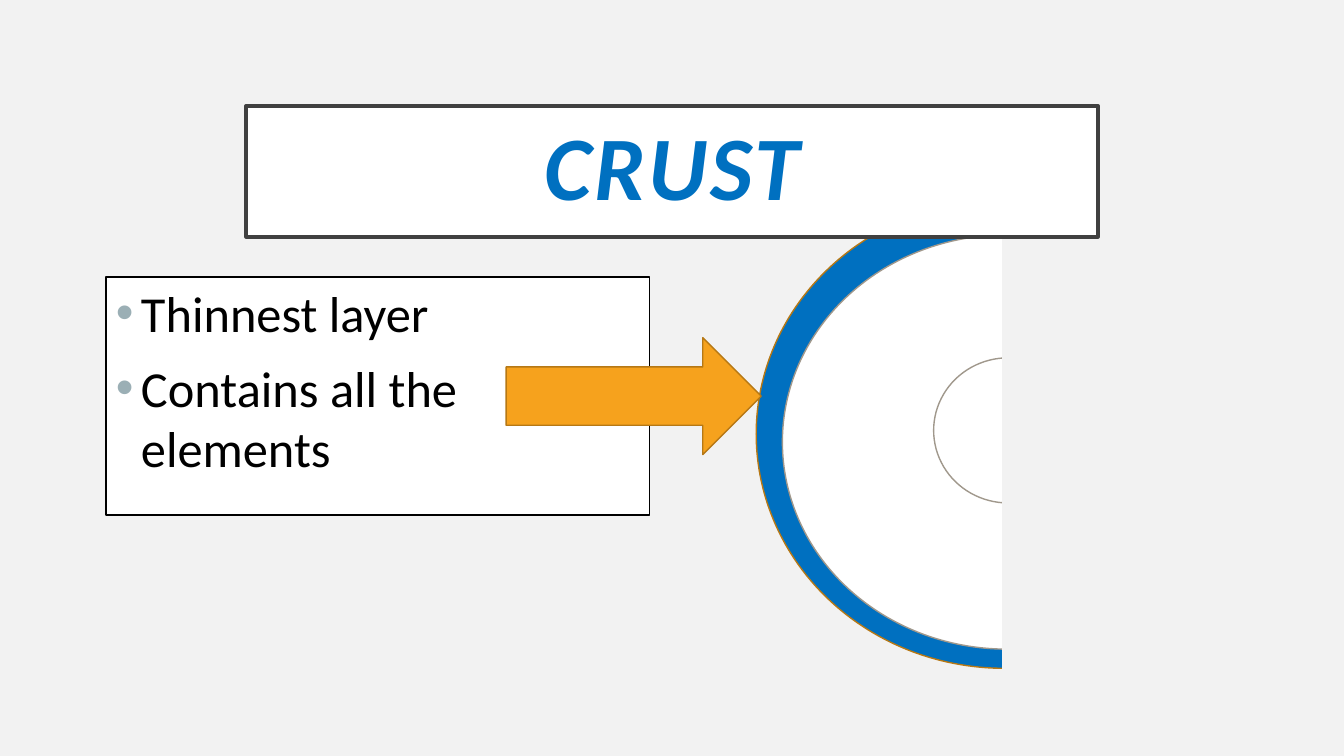
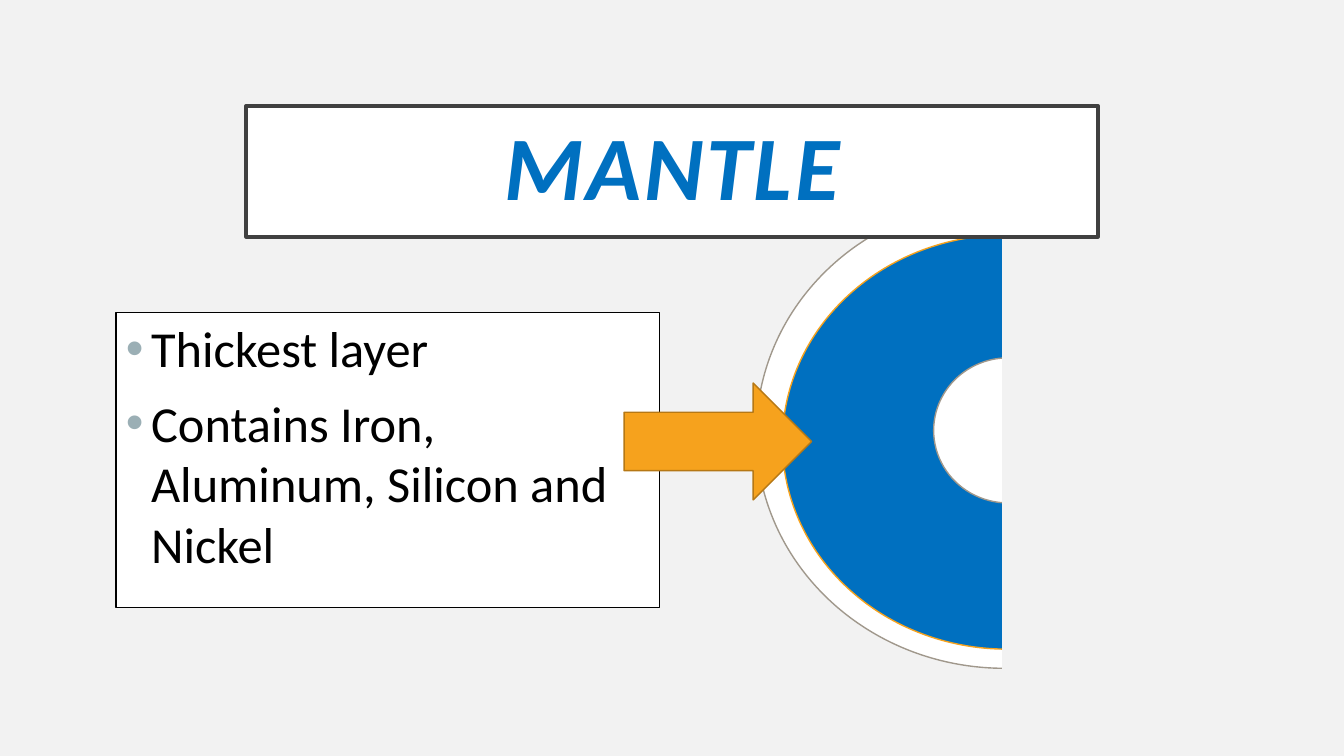
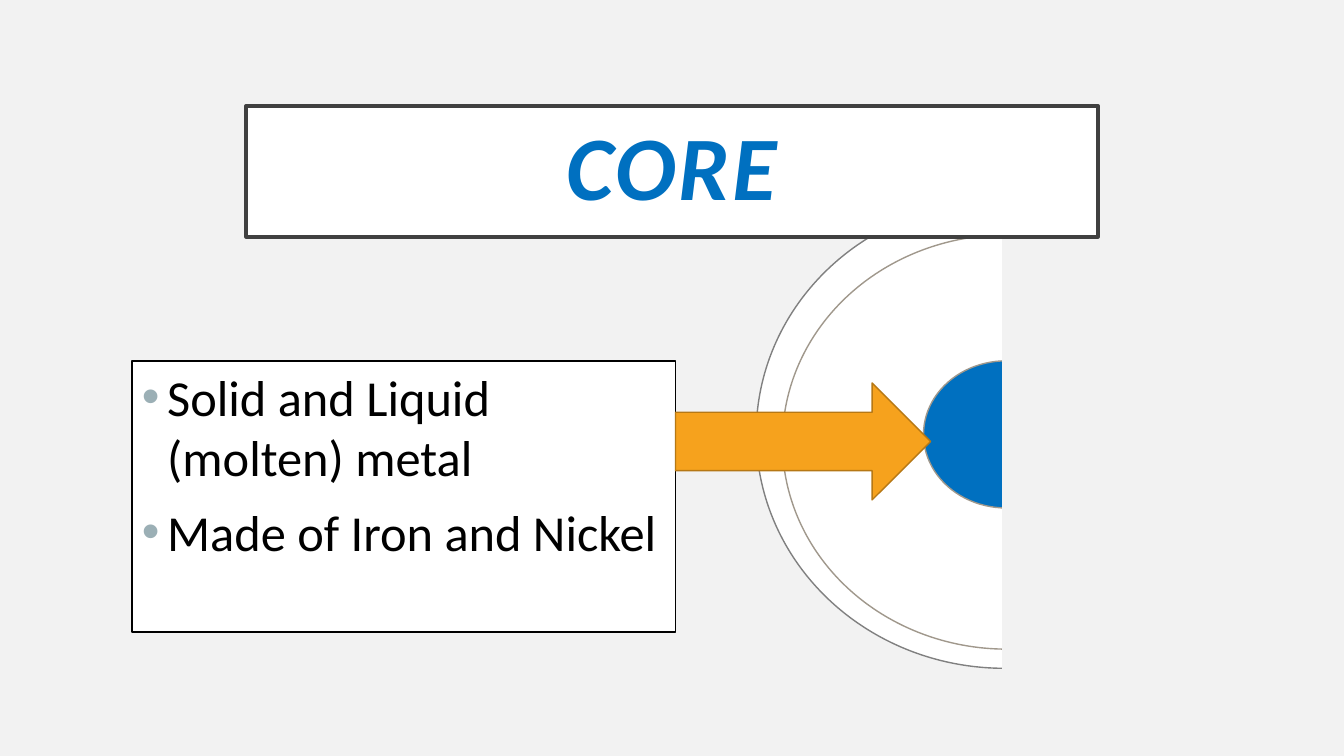
from lxml import etree
from pptx import Presentation
from pptx.dml.color import RGBColor
from pptx.enum.shapes import MSO_SHAPE
from pptx.enum.text import MSO_ANCHOR, PP_ALIGN
from pptx.oxml.ns import qn
from pptx.util import Emu, Pt

PX = 9144
RECTANGLE, OVAL, RIGHT_ARROW = MSO_SHAPE.RECTANGLE, MSO_SHAPE.OVAL, MSO_SHAPE.RIGHT_ARROW
TOP, MIDDLE = MSO_ANCHOR.TOP, MSO_ANCHOR.MIDDLE
LEFT, CENTER = PP_ALIGN.LEFT, PP_ALIGN.CENTER

BACKGROUND = RGBColor(0xF2, 0xF2, 0xF2)
WHITE = RGBColor(0xFF, 0xFF, 0xFF)
BLACK = RGBColor(0x00, 0x00, 0x00)
FRAME = RGBColor(0x40, 0x40, 0x40)
BLUE = RGBColor(0x00, 0x70, 0xC0)
ORANGE = RGBColor(0xF6, 0xA2, 0x1D)
BROWN = RGBColor(0xB6, 0x78, 0x15)
TAUPE = RGBColor(0xA0, 0x98, 0x8C)
GRAY = RGBColor(0x80, 0x80, 0x80)
BULLET = RGBColor(0x9B, 0xAF, 0xB5)
FONT = "Calibri"

TITLE_AREA = (244, 105, 845, 130)
COVER_AREA = (994, 184, 284, 519)
CRUST_AREA = (750, 198, 492, 465)
MANTLE_AREA = (776, 233, 445, 411)
CORE_AREA = (926, 355, 148, 144)
WIDE_CORE_AREA = (916, 358, 164, 146)

SLIDES = [
    {
        "title": "CRUST",
        "facts": ["Thinnest layer", "Contains all the elements"],
        "facts_area": (105, 275, 539, 236),
        "layers": [(CRUST_AREA, BLUE, BROWN), (MANTLE_AREA, WHITE, TAUPE), (CORE_AREA, WHITE, TAUPE)],
        "arrow_area": (502, 335, 253, 116),
    },
    {
        "title": "MANTLE",
        "facts": ["Thickest layer", "Contains Iron, Aluminum, Silicon and Nickel"],
        "facts_area": (115, 310, 539, 293),
        "layers": [(CRUST_AREA, WHITE, TAUPE), (MANTLE_AREA, BLUE, ORANGE), (CORE_AREA, WHITE, TAUPE)],
        "arrow_area": (619, 380, 186, 116),
    },
    {
        "title": "CORE",
        "facts": ["Solid and Liquid (molten) metal", "Made of Iron and Nickel"],
        "facts_area": (131, 358, 539, 269),
        "layers": [(CRUST_AREA, WHITE, GRAY), (MANTLE_AREA, WHITE, TAUPE), (WIDE_CORE_AREA, BLUE, TAUPE)],
        "arrow_area": (670, 380, 253, 116),
    },
]


def px(length):
    """Turn pixels into EMU."""
    return Emu(length * PX)


def add_figure(page, kind, area, fill, line=None, line_width=1):
    """Add a flat preset shape with an optional outline."""
    figure = page.shapes.add_shape(kind, *map(px, area))
    figure.shadow.inherit = False
    figure.fill.solid()
    figure.fill.fore_color.rgb = fill
    if line is None:
        figure.line.fill.background()
    else:
        figure.line.color.rgb = line
        figure.line.width = Pt(line_width)
    return figure


def style_text(para, size, color, align):
    """Align a paragraph and format its runs."""
    para.alignment = align
    for span in para.runs:
        span.font.name = FONT
        span.font.size = Pt(size)
        span.font.color.rgb = color


def add_bullet(para):
    """Give a paragraph a hanging coloured bullet."""
    properties = para._p.get_or_add_pPr()
    properties.set("marL", str(px(25)))
    properties.set("indent", str(px(-25)))
    color = etree.SubElement(properties, qn("a:buClr"))
    etree.SubElement(color, qn("a:srgbClr"), val=str(BULLET))
    etree.SubElement(properties, qn("a:buFont"), typeface="Arial")
    etree.SubElement(properties, qn("a:buChar"), char="•")


def add_title(page, text):
    """Add the framed slide title."""
    frame = add_figure(page, RECTANGLE, TITLE_AREA, WHITE, FRAME, 2.5).text_frame
    frame.word_wrap = True
    frame.vertical_anchor = MIDDLE
    frame.margin_left = frame.margin_right = frame.margin_top = frame.margin_bottom = px(20)
    frame.text = text
    para = frame.paragraphs[0]
    para.line_spacing = 0.9
    style_text(para, 64.8, BLUE, CENTER)
    for span in para.runs:
        span.font.bold = span.font.italic = True
        span._r.get_or_add_rPr().set("spc", "200")


def add_facts(page, area, facts):
    """Add the outlined box of bulleted facts."""
    frame = add_figure(page, RECTANGLE, area, WHITE, BLACK).text_frame
    frame.word_wrap = True
    frame.vertical_anchor = TOP
    frame.text = "\n".join(facts)
    for para in frame.paragraphs:
        para.space_before = Pt(10)
        style_text(para, 36, BLACK, LEFT)
        add_bullet(para)


def add_half_globe(page, layers):
    """Add the nested layers and cover their right half."""
    for area, fill, line in layers:
        add_figure(page, OVAL, area, fill, line)
    add_figure(page, RECTANGLE, COVER_AREA, BACKGROUND)


def main():
    """Build and save the deck."""
    deck = Presentation()
    deck.slide_width, deck.slide_height = px(1333), px(750)
    backdrop = deck.slide_master.background.fill
    backdrop.solid()
    backdrop.fore_color.rgb = BACKGROUND
    for content in SLIDES:
        page = deck.slides.add_slide(deck.slide_layouts[6])
        add_facts(page, content["facts_area"], content["facts"])
        add_half_globe(page, content["layers"])
        add_title(page, content["title"])
        add_figure(page, RIGHT_ARROW, content["arrow_area"], ORANGE, BROWN)
    deck.save("out.pptx")


if __name__ == "__main__":
    main()
